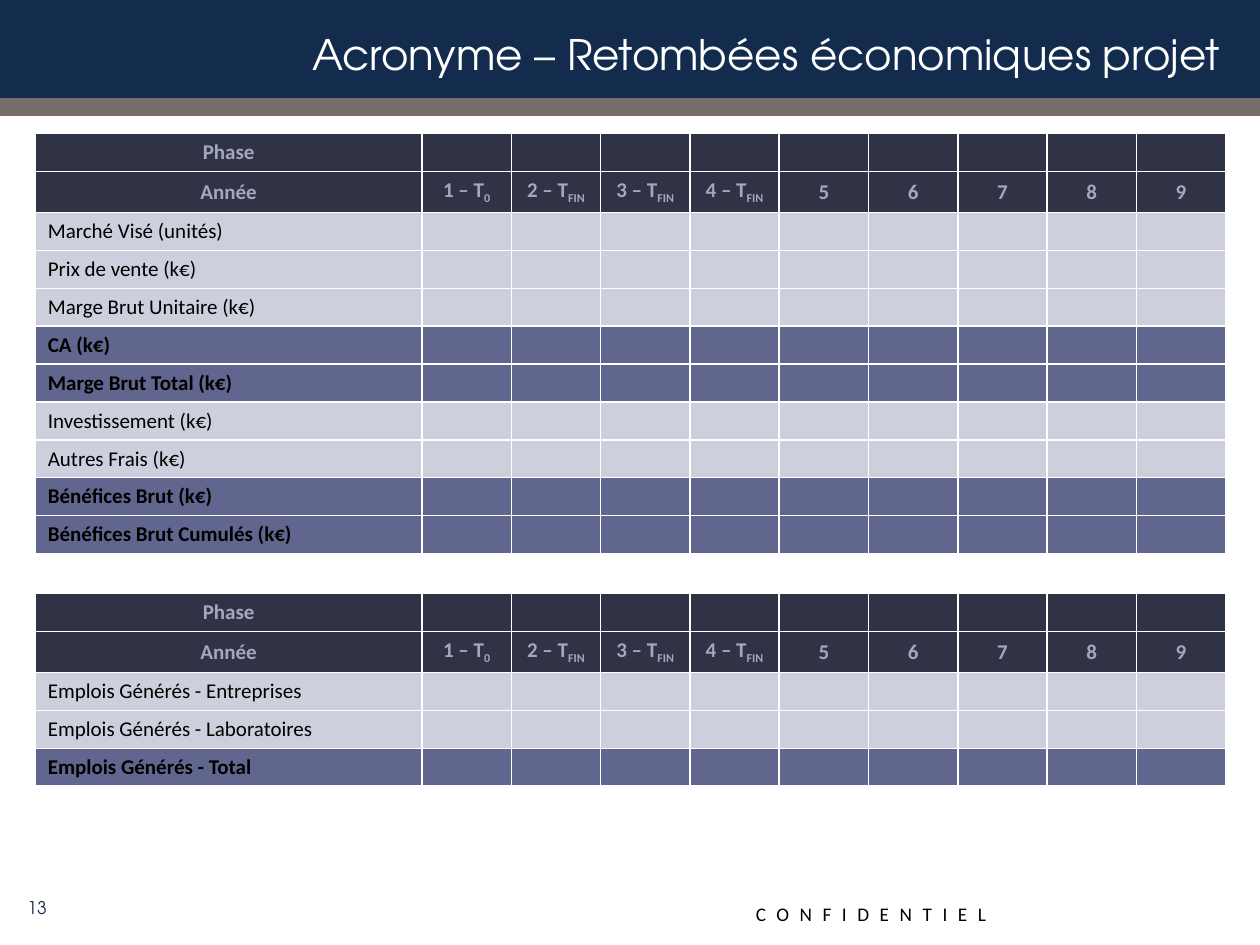
from dataclasses import dataclass

from pptx import Presentation
from pptx import util as u
from pptx.dml.color import RGBColor
from pptx.enum import shapes, text


@dataclass(frozen=True)
class Theme:
    navy: str = "132C4D"
    taupe: str = "766C68"
    white: str = "FFFFFF"
    black: str = "000000"
    header: str = "303346"
    header_text: str = "A3A7C0"
    light: str = "CDCFDD"
    strong: str = "60668D"
    display: str = "TeX Gyre Adventor"
    body: str = "Calibri"
    title_size: int = 24
    table_size: int = 12
    footer_size: int = 11
    number_size: int = 10


def add_text(p, content, *, font, size, color, bold=False, align=None,
             spacing=None, baseline=None):
    """Add one formatted run; spacing is in points, baseline in percent."""
    if align is not None:
        p.alignment = align
    r = p.add_run()
    r.text = content
    r.font.name = font
    r.font.size = u.Pt(size)
    r.font.bold = bold
    r.font.color.rgb = RGBColor.from_string(color)
    rPr = r.font._element
    if spacing is not None:
        rPr.set("spc", str(spacing * 100))
    if baseline is not None:
        rPr.set("baseline", str(baseline * 1000))


class SlideBuilder:
    def __init__(self, prs, theme):
        self.theme = theme
        self.s = prs.slides.add_slide(prs.slide_layouts[5])

    def bar(self, top, height, color):
        sp = self.s.shapes.add_shape(
            shapes.MSO_SHAPE.RECTANGLE, 0, u.Inches(top), u.Inches(10), u.Inches(height))
        sp.shadow.inherit = False
        sp.fill.solid()
        sp.fill.fore_color.rgb = RGBColor.from_string(color)
        sp.line.fill.background()

    def title(self, content, left, top, width, height):
        sp = self.s.shapes.title
        sp.left, sp.top = u.Inches(left), u.Inches(top)
        sp.width, sp.height = u.Inches(width), u.Inches(height)
        self.s.shapes._spTree.append(sp._element)  # in front of the bars
        tf = sp.text_frame
        tf.vertical_anchor = text.MSO_ANCHOR.MIDDLE
        t = self.theme
        add_text(tf.paragraphs[0], content, font=t.display, size=t.title_size,
                 color=t.white, align=text.PP_ALIGN.RIGHT)

    def label(self, content, left, top, width, height, anchor=text.MSO_ANCHOR.TOP,
              **fmt):
        sp = self.s.shapes.add_textbox(
            u.Inches(left), u.Inches(top), u.Inches(width), u.Inches(height))
        tf = sp.text_frame
        tf.word_wrap = False
        tf.vertical_anchor = anchor
        add_text(tf.paragraphs[0], content, **fmt)

    def cell(self, cell, parts, fill, **fmt):
        """Fill a cell; parts holds the text and, optionally, its subscript."""
        cell.fill.solid()
        cell.fill.fore_color.rgb = RGBColor.from_string(fill)
        cell.vertical_anchor = text.MSO_ANCHOR.MIDDLE
        p = cell.text_frame.paragraphs[0]
        size = self.theme.table_size
        for content, baseline in zip(parts, (None, -25)):
            add_text(p, content, font=self.theme.body, size=size,
                     baseline=baseline, **fmt)
        if not parts:  # keeps empty cells from stretching the row
            p._p.get_or_add_endParaRPr().set("sz", str(size * 100))

    def year_table(self, top, years, rows):
        t = self.theme
        n_rows, n_cols = len(rows) + 2, len(years) + 1
        left, width, label_width = 0.28, 9.45, 3.07
        heights = [0.3, 0.32] + [0.3] * len(rows)
        table = self.s.shapes.add_table(
            n_rows, n_cols, u.Inches(left), u.Inches(top),
            u.Inches(width), u.Inches(sum(heights))).table
        table.horz_banding = False
        for i, column in enumerate(table.columns):
            column.width = u.Inches(
                (width - label_width) / len(years) if i else label_width)
        for row, height in zip(table.rows, heights):
            row.height = u.Inches(height)

        # Two header rows
        headers = [[("Phase",)] + [()] * len(years), [("Année",)] + years]
        for i, header in enumerate(headers):
            for j, parts in enumerate(header):
                self.cell(table.cell(i, j), parts, t.header, color=t.header_text,
                          bold=True, align=text.PP_ALIGN.CENTER)

        # Detail rows, with totals in bold on a darker fill
        for i, (name, total) in enumerate(rows, start=2):
            for j in range(n_cols):
                self.cell(table.cell(i, j), () if j else (name,),
                          t.strong if total else t.light,
                          color=t.black, bold=total)


def main():
    prs = Presentation()
    prs.slide_width, prs.slide_height = u.Inches(10), u.Inches(7.5)
    t = Theme()
    b = SlideBuilder(prs, t)

    # Header band and title
    b.bar(0, 0.9, t.navy)
    b.bar(0.78, 0.14, t.taupe)
    b.title("Acronyme – Retombées économiques projet", 0.15, 0.14, 9.63, 0.58)

    # Footer
    b.label("CONFIDENTIEL", 5.9, 7.11, 2.13, 0.29, font=t.body,
            size=t.footer_size, color=t.black, spacing=6)
    b.label("13", 0, 7, 0.47, 0.4, anchor=text.MSO_ANCHOR.MIDDLE, font=t.display,
            size=t.number_size, color=t.navy, align=text.PP_ALIGN.RIGHT)

    # Economic results and jobs
    years = [("1 – T", "0")] + [(f"{n} – T", "FIN") for n in range(2, 5)]
    years += [(str(n),) for n in range(5, 10)]
    b.year_table(1.06, years, [
        ("Marché Visé (unités)", False),
        ("Prix de vente (k€)", False),
        ("Marge Brut Unitaire (k€)", False),
        ("CA (k€)", True),
        ("Marge Brut Total (k€)", True),
        ("Investissement (k€)", False),
        ("Autres Frais (k€)", False),
        ("Bénéfices Brut (k€)", True),
        ("Bénéfices Brut Cumulés (k€)", True),
    ])
    b.year_table(4.71, years, [
        ("Emplois Générés - Entreprises", False),
        ("Emplois Générés - Laboratoires", False),
        ("Emplois Générés - Total", True),
    ])
    prs.save("out.pptx")


if __name__ == "__main__":
    main()
